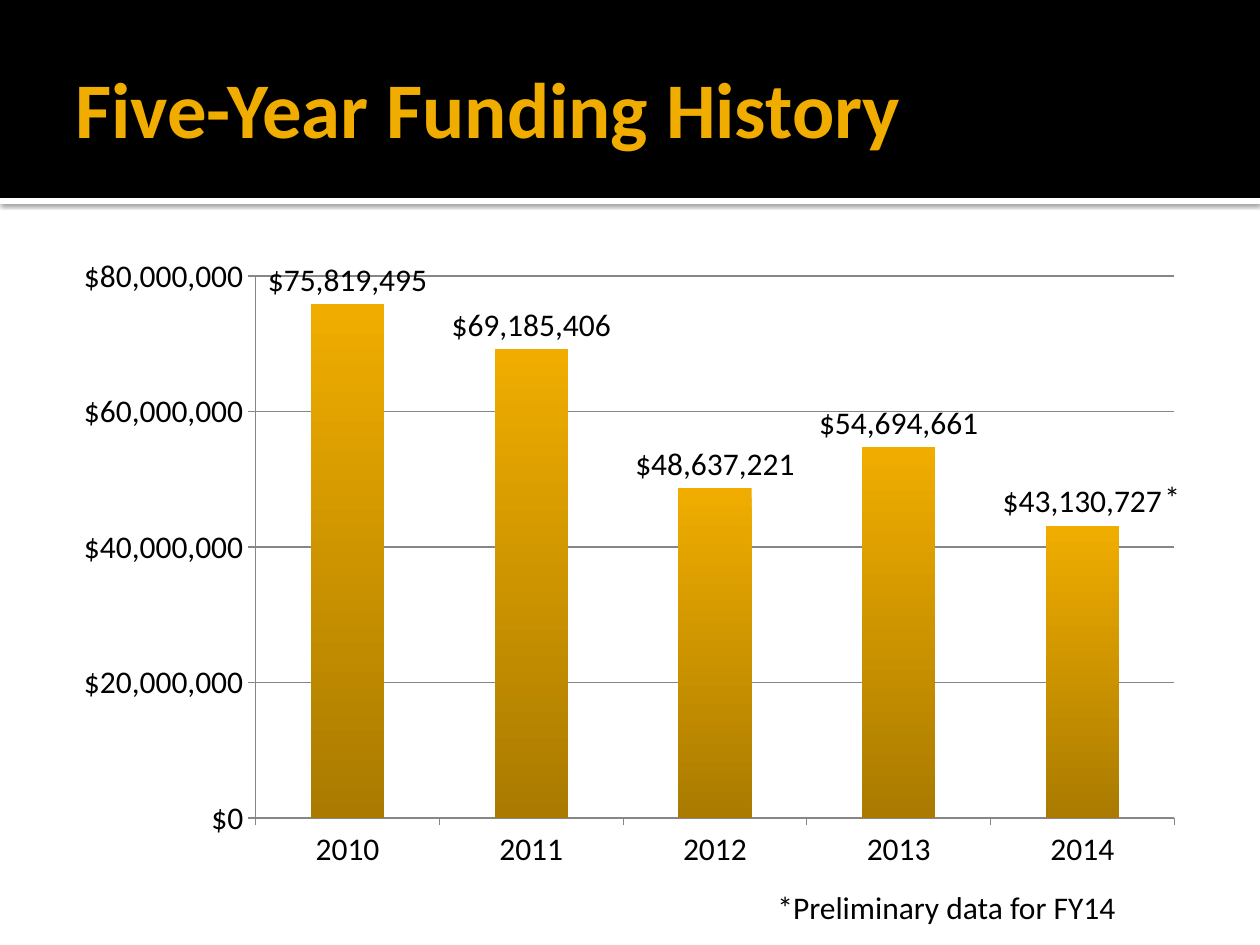
import lxml.etree
import pptx
import pptx.chart.data
import pptx.dml.color
import pptx.enum.chart
import pptx.enum.shapes
import pptx.enum.text
import pptx.oxml
import pptx.oxml.ns
import pptx.util

EMU_PER_PX = 914400 / 126
FONT = "Calibri"
GOLD, DARK_GOLD, BLACK, WHITE, GREY = "F0AD00", "AA7B00", "000000", "FFFFFF", "868686"
FUNDING = {
    "2010": 75819495,
    "2011": 69185406,
    "2012": 48637221,
    "2013": 54694661,
    "2014": 43130727,
}


def px(length):
    """Turn px into EMU."""
    return pptx.util.Emu(round(length * EMU_PER_PX))


def color(value):
    """Turn a hex string into a colour."""
    return pptx.dml.color.RGBColor.from_string(value)


def style_font(font, size, value, bold=False):
    """Set face, size, colour and weight of a font."""
    font.name = FONT
    font.size = pptx.util.Pt(size)
    font.bold = bold
    font.color.rgb = color(value)


def add_band(slide, box, fill):
    """Add a plain filled rectangle."""
    shape = slide.shapes.add_shape(
        pptx.enum.shapes.MSO_SHAPE.RECTANGLE, *map(px, box)
    )
    shape.shadow.inherit = False
    shape.fill.solid()
    shape.fill.fore_color.rgb = color(fill)
    shape.line.fill.background()
    return shape


def add_shadow(shape):
    """Give a shape a soft shadow below it."""
    effects = shape._element.spPr.find(pptx.oxml.ns.qn("a:effectLst"))
    effects.append(pptx.oxml.parse_xml(
        f'<a:outerShdw {pptx.oxml.ns.nsdecls("a")} blurRad="31750" dist="10160" '
        f'dir="5400000" algn="tl" rotWithShape="0"><a:srgbClr val="{BLACK}">'
        '<a:alpha val="60000"/></a:srgbClr></a:outerShdw>'
    ))


def add_text(slide, box, text, size=18, value=BLACK, bold=False, middle=False):
    """Add a one-run text box."""
    frame = slide.shapes.add_textbox(*map(px, box)).text_frame
    frame.word_wrap = True
    if middle:
        frame.vertical_anchor = pptx.enum.text.MSO_ANCHOR.MIDDLE
    run = frame.paragraphs[0].add_run()
    run.text = text
    style_font(run.font, size, value, bold)


def add_header(slide, box):
    """Add the black header with its white edge and the title."""
    left, top, width, height = box
    add_shadow(add_band(slide, (left, top + height, width, 6), WHITE))
    add_band(slide, box, BLACK)
    title_box = (left + 63, top + 21, width - 126, height - 25)
    add_text(slide, title_box, "Five-Year Funding History", 45, GOLD, True, True)


def set_plot_layout(chart, left, top, width, height):
    """Fix the inner plot area as fractions of the chart."""
    plot_area = chart._chartSpace.chart.plotArea
    for layout in plot_area.findall(pptx.oxml.ns.qn("c:layout")):
        plot_area.remove(layout)
    layout = lxml.etree.Element(pptx.oxml.ns.qn("c:layout"))
    manual = lxml.etree.SubElement(layout, pptx.oxml.ns.qn("c:manualLayout"))
    settings = {"layoutTarget": "inner", "xMode": "edge", "yMode": "edge",
                "x": left, "y": top, "w": width, "h": height}
    for name, value in settings.items():
        element = lxml.etree.SubElement(manual, pptx.oxml.ns.qn(f"c:{name}"))
        element.set("val", str(value))
    plot_area.insert(0, layout)


def add_funding_chart(slide, box):
    """Add the column chart and the asterisk on its last label."""
    left, top, width, height = box
    data = pptx.chart.data.CategoryChartData(number_format='"$"#,##0')
    data.categories = list(FUNDING)
    data.add_series("Series 1", list(FUNDING.values()))
    chart = slide.shapes.add_chart(
        pptx.enum.chart.XL_CHART_TYPE.COLUMN_CLUSTERED, *map(px, box), data
    ).chart
    chart.has_title = False
    chart.has_legend = False
    style_font(chart.font, 18, BLACK)
    set_plot_layout(chart, 0.17, 0.05, 0.81, 0.85)

    plot = chart.plots[0]
    plot.vary_by_categories = False
    plot.gap_width = 150
    plot.has_data_labels = True
    labels = plot.data_labels
    labels.show_value = True
    labels.number_format = '"$"#,##0'
    labels.number_format_is_linked = False
    labels.position = pptx.enum.chart.XL_LABEL_POSITION.OUTSIDE_END
    style_font(labels.font, 18, BLACK)

    fill = plot.series[0].format.fill
    fill.gradient()
    fill.gradient_angle = 270
    for stop, value in zip(fill.gradient_stops, (GOLD, DARK_GOLD)):
        stop.color.rgb = color(value)

    axis = chart.value_axis
    axis.minimum_scale, axis.maximum_scale = 0, 80000000
    axis.major_unit = 20000000
    axis.tick_labels.number_format = '"$"#,##0'
    axis.tick_labels.number_format_is_linked = False
    axis.has_major_gridlines = True
    for line in (axis.major_gridlines.format.line, axis.format.line,
                 chart.category_axis.format.line):
        line.color.rgb = color(GREY)
        line.width = pptx.util.Pt(0.75)
    for axis in (chart.value_axis, chart.category_axis):
        axis.major_tick_mark = pptx.enum.chart.XL_TICK_MARK.OUTSIDE
        style_font(axis.tick_labels.font, 18, BLACK)

    add_text(slide, (left + 1089, top + 228, 45, 50), "*")


def main():
    """Build and save the slide."""
    presentation = pptx.Presentation()
    presentation.slide_width, presentation.slide_height = px(1260), px(945)
    slide = presentation.slides.add_slide(presentation.slide_layouts[6])
    add_header(slide, (0, 0, 1260, 198))
    add_funding_chart(slide, (63, 244, 1134, 638))
    add_text(slide, (765, 882, 386, 50), "*Preliminary data for FY14")
    presentation.save("out.pptx")


if __name__ == "__main__":
    main()
